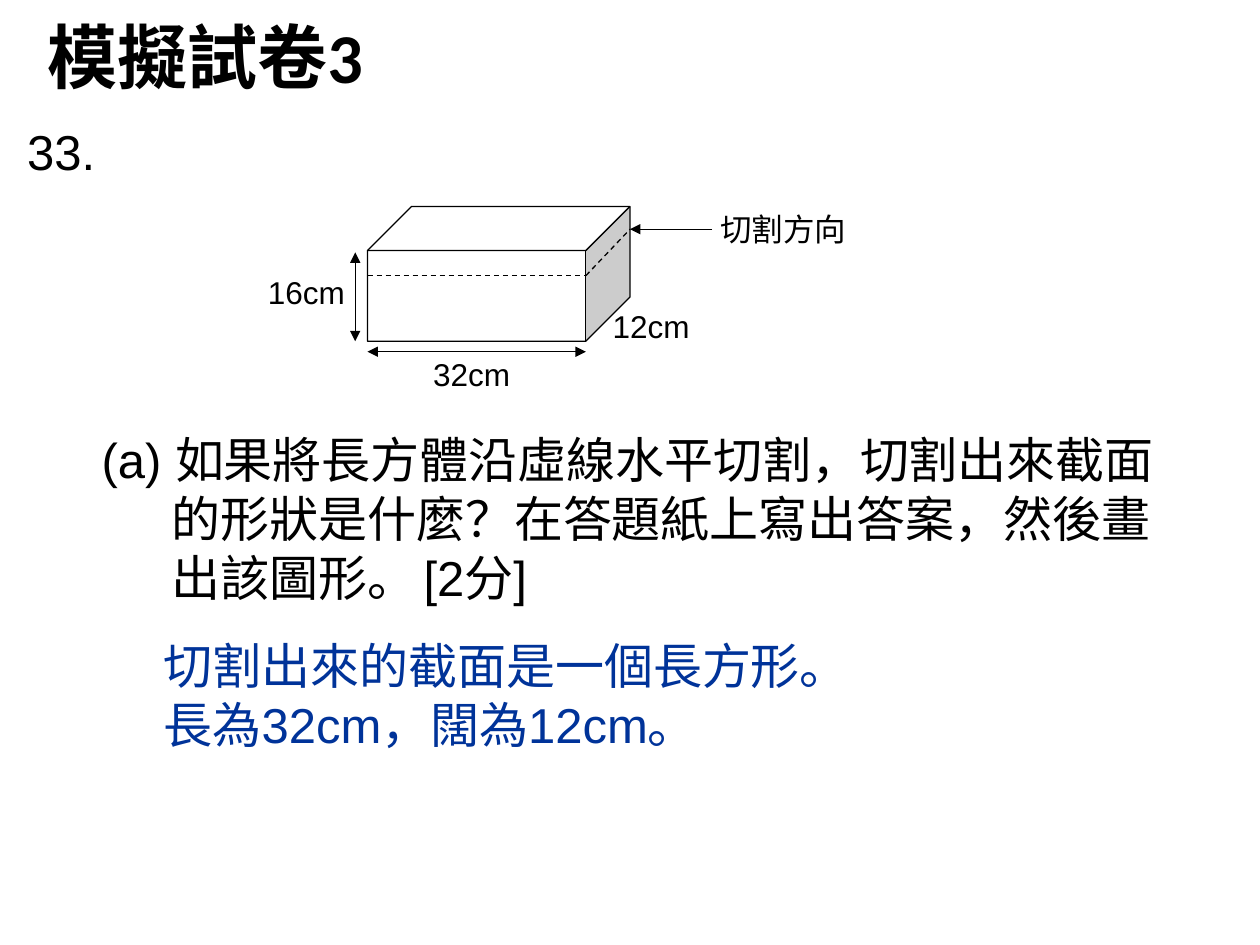
"""Build the exam slide about cutting a cuboid horizontally."""
from typing import NamedTuple

from lxml import etree
from pptx import Presentation
from pptx.dml.color import RGBColor
from pptx.enum.dml import MSO_LINE
from pptx.enum.shapes import MSO_CONNECTOR, MSO_SHAPE
from pptx.enum.text import MSO_ANCHOR, MSO_AUTO_SIZE, PP_ALIGN
from pptx.oxml.ns import qn
from pptx.util import Pt

BLACK = RGBColor(0, 0, 0)
WHITE = RGBColor(255, 255, 255)
BLUE = RGBColor(0, 0x33, 0x99)
STRAIGHT = MSO_CONNECTOR.STRAIGHT
CUBE = MSO_SHAPE.CUBE
DASH = MSO_LINE.DASH
LEFT, CENTER = PP_ALIGN.LEFT, PP_ALIGN.CENTER
MIDDLE, TOP = MSO_ANCHOR.MIDDLE, MSO_ANCHOR.TOP
FIXED = MSO_AUTO_SIZE.NONE

X, Y, WIDE, HIGH, DEPTH = 210, 118, 150, 77, 25.2
RIGHT, BASE = X + WIDE, Y + HIGH
FRONT = RIGHT - DEPTH
CUT = 157.5
AIM = 131


class Box(NamedTuple):
    left: float
    top: float
    width: float
    height: float


class Label(NamedTuple):
    text: str
    box: Box


class Rule(NamedTuple):
    start: tuple[float, float]
    end: tuple[float, float]
    head: bool = False
    tail: bool = False
    dash: bool = False


LABELS = [
    Label("16cm", Box(146, 152.5, 64, 29)),
    Label("32cm", Box(240.5, 199.5, 64, 29)),
    Label("12cm", Box(343, 172, 64, 29)),
    Label("切割方向", Box(404.5, 116.5, 88, 29)),
]
RULES = [
    Rule((203, Y + DEPTH + 1), (203, BASE), head=True, tail=True),
    Rule((X, 201), (FRONT, 201), head=True, tail=True),
    Rule((407, AIM), (RIGHT, AIM), tail=True),
    Rule((X, CUT), (FRONT, CUT), dash=True),
    Rule((FRONT, CUT), (RIGHT, AIM), dash=True),
]


def place(shape, box: Box) -> None:
    shape.left, shape.top, shape.width, shape.height = map(Pt, box)


def write(shape, text: str, *, size: float = 28, font: str = "Arial",
          color: RGBColor = BLACK, bold: bool = False, align=LEFT,
          anchor=TOP, wrap: bool = True, indent: float = 0,
          tab: float = 0) -> None:
    frame = shape.text_frame
    frame.text = text
    frame.word_wrap = wrap
    frame.auto_size = FIXED
    frame.vertical_anchor = anchor
    for para in frame.paragraphs:
        para.alignment = align
        props = para._p.get_or_add_pPr()
        if indent:
            props.set("marL", str(Pt(indent)))
            props.set("indent", str(-Pt(indent)))
        if tab:
            stops = etree.SubElement(props, qn("a:tabLst"))
            etree.SubElement(stops, qn("a:tab"), pos=str(Pt(tab)), algn="r")
        for run in para.runs:
            run.font.name = font
            run.font.size = Pt(size)
            run.font.bold = bold
            run.font.color.rgb = color


def add_text(slide, label: Label, **style) -> None:
    shape = slide.shapes.add_textbox(*map(Pt, label.box))
    write(shape, label.text, **style)


def add_rule(slide, rule: Rule) -> None:
    line = slide.shapes.add_connector(
        STRAIGHT, *map(Pt, rule.start + rule.end))
    line.line.color.rgb = BLACK
    line.line.width = Pt(0.75)
    if rule.dash:
        line.line.dash_style = DASH
    pen = line.line._get_or_add_ln()
    for tag, shown in (("a:headEnd", rule.head), ("a:tailEnd", rule.tail)):
        if shown:
            etree.SubElement(pen, qn(tag), type="triangle")
    etree.SubElement(line._element.spPr, qn("a:effectLst"))


def add_cube(slide) -> None:
    cube = slide.shapes.add_shape(CUBE, *map(Pt, (X, Y, WIDE, HIGH)))
    cube.adjustments[0] = DEPTH / HIGH
    cube.shadow.inherit = False
    cube.fill.solid()
    cube.fill.fore_color.rgb = WHITE
    cube.line.color.rgb = BLACK
    cube.line.width = Pt(0.75)


def main() -> None:
    deck = Presentation()
    deck.slide_width, deck.slide_height = Pt(720), Pt(540)
    slide = deck.slides.add_slide(deck.slide_layouts[5])
    title = slide.shapes.title
    place(title, Box(20, 2, 222, 59))
    write(title, "模擬試卷3", size=40, font="Calibri", bold=True,
          anchor=MIDDLE)
    add_text(slide, Label("33.", Box(8.5, 65.5, 53, 41)),
             align=CENTER, anchor=MIDDLE, wrap=False)
    task = ("(a) 如果將長方體沿虛線水平切割，切割出來截面的形狀是什麼？"
            "在答題紙上寫出答案，然後畫出該圖形。\t[2分]")
    add_text(slide, Label(task, Box(51, 242, 618.5, 109.5)),
             indent=40, tab=558)
    add_cube(slide)
    for rule in RULES:
        add_rule(slide, rule)
    for label in LABELS:
        add_text(slide, label, size=18)
    reply = "切割出來的截面是一個長方形。\n長為32cm，闊為12cm。"
    add_text(slide, Label(reply, Box(86.5, 359.5, 397, 75)), color=BLUE)
    deck.save("out.pptx")


if __name__ == "__main__":
    main()
